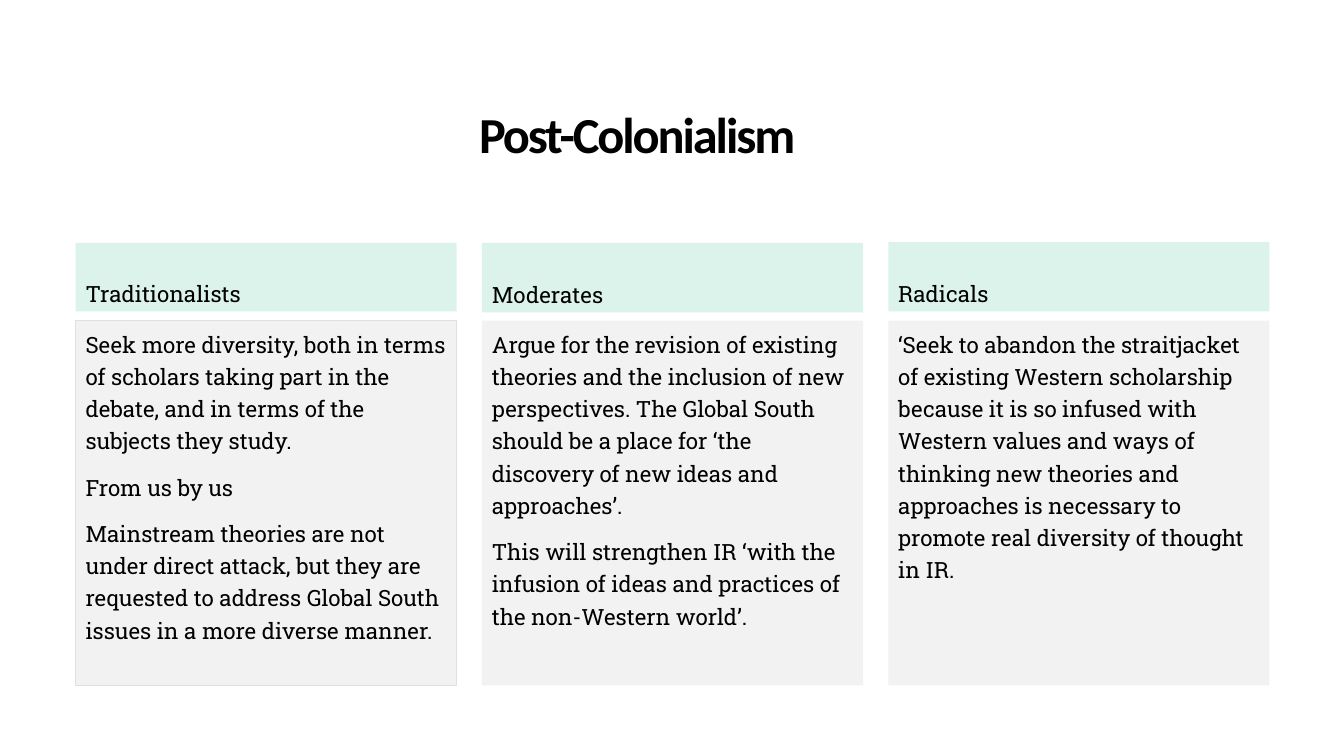
from pptx import Presentation
from pptx.dml.color import RGBColor
from pptx.enum.shapes import MSO_SHAPE
from pptx.enum.text import MSO_ANCHOR, MSO_AUTO_SIZE, PP_ALIGN
from pptx.util import Inches, Pt

TITLE = "Post-Colonialism"
# Heading, heading top, heading height, box outline, paragraphs
SCHOOLS = [
    ("Traditionalists", 2.41, 0.68, "E0E0E0", [
        "Seek more diversity, both in terms of scholars taking part in the debate, "
        "and in terms of the subjects they study.",
        "From us by us",
        "Mainstream theories are not under direct attack, but they are requested to "
        "address Global South issues in a more diverse manner.",
    ]),
    ("Moderates", 2.41, 0.69, None, [
        "Argue for the revision of existing theories and the inclusion of new "
        "perspectives. The Global South should be a place for ‘the discovery of "
        "new ideas and approaches’.",
        "This will strengthen IR ‘with the infusion of ideas and practices of the "
        "non-Western world’.",
    ]),
    ("Radicals", 2.4, 0.69, None, [
        "‘Seek to abandon the straitjacket of existing Western scholarship because "
        "it is so infused with Western values and ways of thinking new theories and "
        "approaches is necessary to promote real diversity of thought in IR.",
    ]),
]
LEFT, COLUMN_WIDTH, GAP = 0.75, 3.78, 0.25
BODY_TOP, BODY_HEIGHT = 3.18, 3.62
MINT, GREY, BLACK = "DCF3EC", "F2F2F2", "000000"


def color(hex_code):
    return RGBColor.from_string(hex_code)


def add_run(paragraph, text, font_name, size):
    run = paragraph.add_run()
    run.text = text
    run.font.name = font_name
    run.font.size = Pt(size)
    run.font.color.rgb = color(BLACK)
    return run


def add_panel(slide, left, top, height, fill, paragraphs, anchor, outline=None):
    panel = slide.shapes.add_shape(
        MSO_SHAPE.RECTANGLE, Inches(left), Inches(top), Inches(COLUMN_WIDTH), Inches(height))
    panel.shadow.inherit = False
    panel.fill.solid()
    panel.fill.fore_color.rgb = color(fill)
    if outline:
        panel.line.color.rgb = color(outline)
        panel.line.width = Pt(0.75)
    else:
        panel.line.fill.background()
    frame = panel.text_frame
    frame.word_wrap = True
    frame.vertical_anchor = anchor
    for index, text in enumerate(paragraphs):
        paragraph = frame.add_paragraph() if index else frame.paragraphs[0]
        paragraph.alignment = PP_ALIGN.LEFT
        paragraph.line_spacing = 1.2
        paragraph.space_before = Pt(10)
        add_run(paragraph, text, "Roboto Slab", 16)


def add_title(slide):
    title = slide.shapes.title
    title.left, title.top = Inches(2.68), Inches(0.78)
    title.width, title.height = Inches(7.28), Inches(1.18)
    frame = title.text_frame
    frame.auto_size = MSO_AUTO_SIZE.NONE
    frame.word_wrap = True
    frame.vertical_anchor = MSO_ANCHOR.MIDDLE
    frame.margin_left = frame.margin_right = Inches(0.25)
    frame.margin_top = frame.margin_bottom = Inches(0.25)
    paragraph = frame.paragraphs[0]
    paragraph.alignment = PP_ALIGN.CENTER
    paragraph.line_spacing = 0.85
    run = add_run(paragraph, TITLE, "Calibri", 36)
    run.font.bold = True
    run.font._element.set("spc", "-150")


def main():
    deck = Presentation()
    deck.slide_width, deck.slide_height = Inches(13.33), Inches(7.5)
    slide = deck.slides.add_slide(deck.slide_layouts[5])
    add_title(slide)
    for column, (heading, top, height, outline, paragraphs) in enumerate(SCHOOLS):
        left = LEFT + column * (COLUMN_WIDTH + GAP)
        add_panel(slide, left, top, height, MINT, [heading], MSO_ANCHOR.BOTTOM)
        add_panel(slide, left, BODY_TOP, BODY_HEIGHT, GREY, paragraphs,
                  MSO_ANCHOR.TOP, outline)
    deck.save("out.pptx")


if __name__ == "__main__":
    main()
